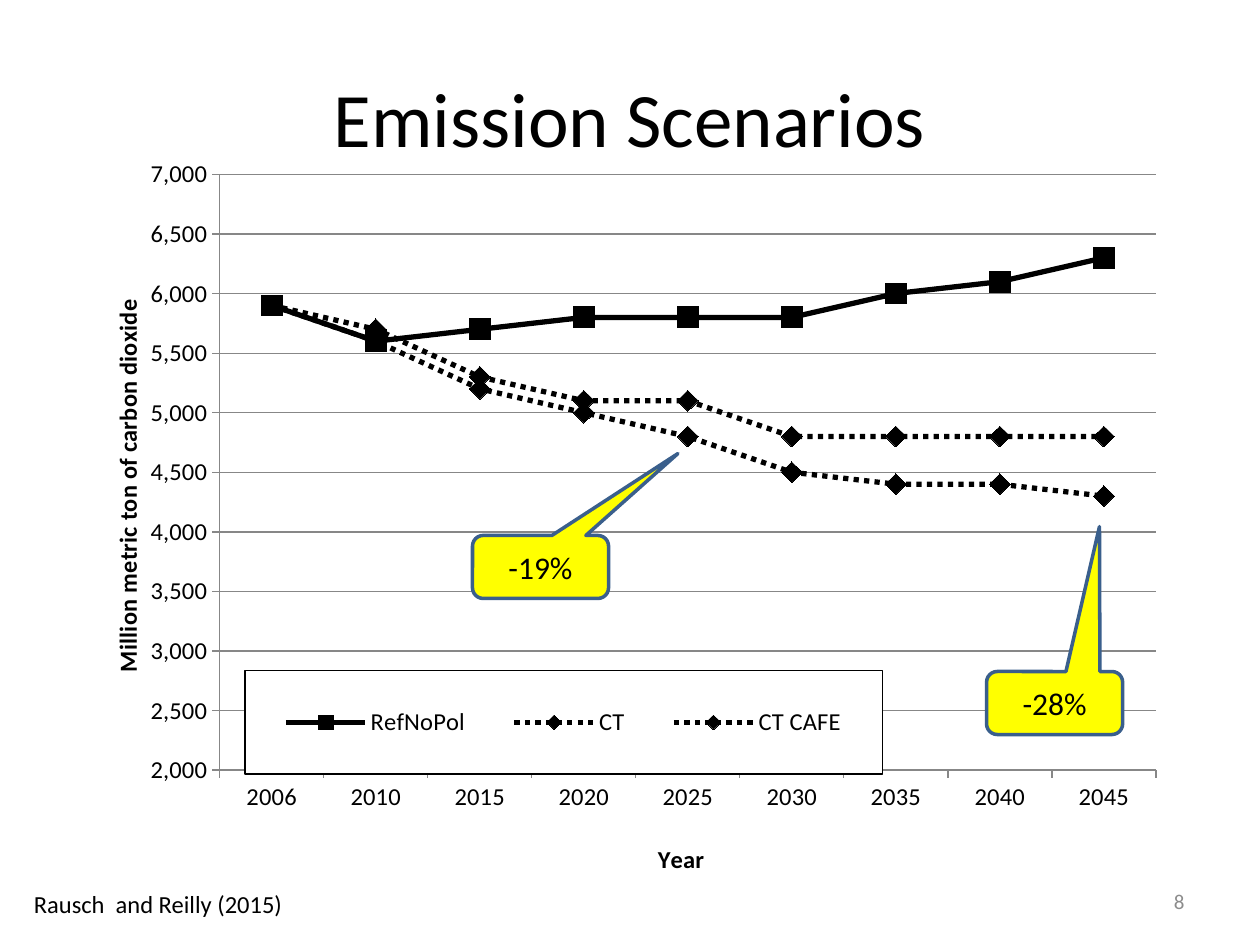
import pptx
import pptx.util
import pptx.chart.data
import pptx.dml.color
import pptx.enum.chart
import pptx.enum.dml
import pptx.enum.shapes
import pptx.enum.text
import pptx.oxml
import pptx.oxml.ns

Inches, Pt = pptx.util.Inches, pptx.util.Pt
RGBColor = pptx.dml.color.RGBColor
qn = pptx.oxml.ns.qn
PP_ALIGN = pptx.enum.text.PP_ALIGN
ANCHOR = pptx.enum.text.MSO_ANCHOR
MARKER = pptx.enum.chart.XL_MARKER_STYLE
DASH = pptx.enum.dml.MSO_LINE

BLACK = RGBColor(0x00, 0x00, 0x00)
GRAY = RGBColor(0x8C, 0x8C, 0x8C)
AXIS_GRAY = RGBColor(0x87, 0x87, 0x87)
YELLOW = RGBColor(0xFF, 0xFF, 0x00)
BLUE = RGBColor(0x3A, 0x5F, 0x8C)
FONT = "Calibri"


def write(sp, text, size, align, color=BLACK, wrap=True):
    tf = sp.text_frame
    tf.word_wrap = wrap
    tf.vertical_anchor = ANCHOR.MIDDLE
    p = tf.paragraphs[0]
    p.alignment = align
    r = p.add_run()
    r.text = text
    r.font.name, r.font.size = FONT, Pt(size)
    r.font.color.rgb = color


def place(parent, after, inner=False, **fractions):
    """Give a chart part a fixed place, as fractions of the chart's size."""
    for old in parent.findall(qn("c:layout")):
        parent.remove(old)
    target = '<c:layoutTarget val="inner"/>' if inner else ""
    modes = "".join(f'<c:{k}Mode val="edge"/>' for k in "xy")
    values = "".join(f'<c:{k} val="{v}"/>' for k, v in fractions.items())
    layout = pptx.oxml.parse_xml(
        f'<c:layout {pptx.oxml.ns.nsdecls("c")}><c:manualLayout>'
        f"{target}{modes}{values}</c:manualLayout></c:layout>")
    if after is None:
        parent.insert(0, layout)
    else:
        parent.find(qn(after)).addnext(layout)


prs = pptx.Presentation()
prs.slide_width, prs.slide_height = Inches(10), Inches(7.5)
s = prs.slides.add_slide(prs.slide_layouts[6])

# Source note
sp = s.shapes.add_textbox(Inches(0.17), Inches(7), Inches(2.19), Inches(0.34))
write(sp, "Rausch  and Reilly (2015)", 14, PP_ALIGN.LEFT, wrap=False)

# Emissions chart
data = pptx.chart.data.CategoryChartData(number_format="#,##0")
data.categories = ["2006", "2010", "2015", "2020", "2025", "2030", "2035", "2040", "2045"]
data.add_series("RefNoPol", [5900, 5600, 5700, 5800, 5800, 5800, 6000, 6100, 6300])
data.add_series("CT", [5900, 5700, 5300, 5100, 5100, 4800, 4800, 4800, 4800])
data.add_series("CT CAFE", [5900, 5600, 5200, 5000, 4800, 4500, 4400, 4400, 4300])
chart = s.shapes.add_chart(
    pptx.enum.chart.XL_CHART_TYPE.LINE_MARKERS,
    Inches(0.58), Inches(1.08), Inches(8.69), Inches(5.92), data).chart
chart.has_title = False
chart.font.name, chart.font.size = FONT, Pt(14)
chart.font.color.rgb = BLACK
chart.plots[0].vary_by_categories = False

styles = [(MARKER.SQUARE, DASH.SOLID), (MARKER.DIAMOND, DASH.ROUND_DOT),
          (MARKER.DIAMOND, DASH.ROUND_DOT)]
for series, (marker, dash) in zip(chart.plots[0].series, styles):
    series.smooth = False
    line = series.format.line
    line.color.rgb, line.width, line.dash_style = BLACK, Pt(3), dash
    series.marker.style, series.marker.size = marker, 12
    series.marker.format.fill.solid()
    series.marker.format.fill.fore_color.rgb = BLACK
    series.marker.format.line.fill.background()

years, tons = chart.category_axis, chart.value_axis
axis_titles = [(years, "Year", 0.53, 0.95),
               (tons, "Million metric ton of carbon dioxide", 0.03, 0.22)]
for axis, text, x, y in axis_titles:
    axis.major_tick_mark = pptx.enum.chart.XL_TICK_MARK.OUTSIDE
    axis.minor_tick_mark = pptx.enum.chart.XL_TICK_MARK.NONE
    axis.format.line.color.rgb = AXIS_GRAY
    r = axis.axis_title.text_frame.paragraphs[0].add_run()
    r.text = text
    r.font.name, r.font.size, r.font.bold = FONT, Pt(14), True
    r.font.color.rgb = BLACK
    place(axis.axis_title._element, "c:tx", x=x, y=y)
years.has_major_gridlines = False
tons.has_major_gridlines = True
tons.major_gridlines.format.line.color.rgb = AXIS_GRAY
tons.minimum_scale, tons.maximum_scale, tons.major_unit = 2000, 7000, 500
tons.tick_labels.number_format = "#,##0"
tons.tick_labels.number_format_is_linked = False

chart.has_legend = True
chart.legend.position = pptx.enum.chart.XL_LEGEND_POSITION.BOTTOM
chart.legend.include_in_layout = False
legend = chart.legend._element
place(legend, "c:legendPos", x=0.157, y=0.724, w=0.582, h=0.14)
legend.find(qn("c:overlay")).addnext(pptx.oxml.parse_xml(
    f'<c:spPr {pptx.oxml.ns.nsdecls("c", "a")}>'
    '<a:solidFill><a:srgbClr val="FFFFFF"/></a:solidFill>'
    '<a:ln w="9525"><a:solidFill><a:srgbClr val="000000"/></a:solidFill></a:ln></c:spPr>'))
plot_area = chart._chartSpace.chart.plotArea
place(plot_area, None, inner=True, x=0.134, y=0.052, w=0.855, h=0.807)

# Title
sp = s.shapes.add_textbox(Inches(0.5), Inches(0.3), Inches(9), Inches(1.25))
write(sp, "Emission Scenarios", 44, PP_ALIGN.CENTER)

# Reductions against the reference
callouts = [("-19%", 3.75, 4.25, 1.01, -1.8), ("-28%", 7.83, 5.33, 0.33, -2.8)]
for text, x, y, tip_x, tip_y in callouts:
    sp = s.shapes.add_shape(
        pptx.enum.shapes.MSO_SHAPE.ROUNDED_RECTANGULAR_CALLOUT,
        Inches(x), Inches(y), Inches(1.08), Inches(0.5))
    sp.adjustments[0], sp.adjustments[1], sp.adjustments[2] = tip_x, tip_y, 0.17
    sp.shadow.inherit = False
    sp.fill.solid()
    sp.fill.fore_color.rgb = YELLOW
    sp.line.color.rgb, sp.line.width = BLUE, Pt(2)
    write(sp, text, 18, PP_ALIGN.CENTER)

# Slide number
sp = s.shapes.add_textbox(Inches(7.17), Inches(6.95), Inches(2.33), Inches(0.4))
write(sp, "8", 12, PP_ALIGN.RIGHT, GRAY)

prs.save("out.pptx")
